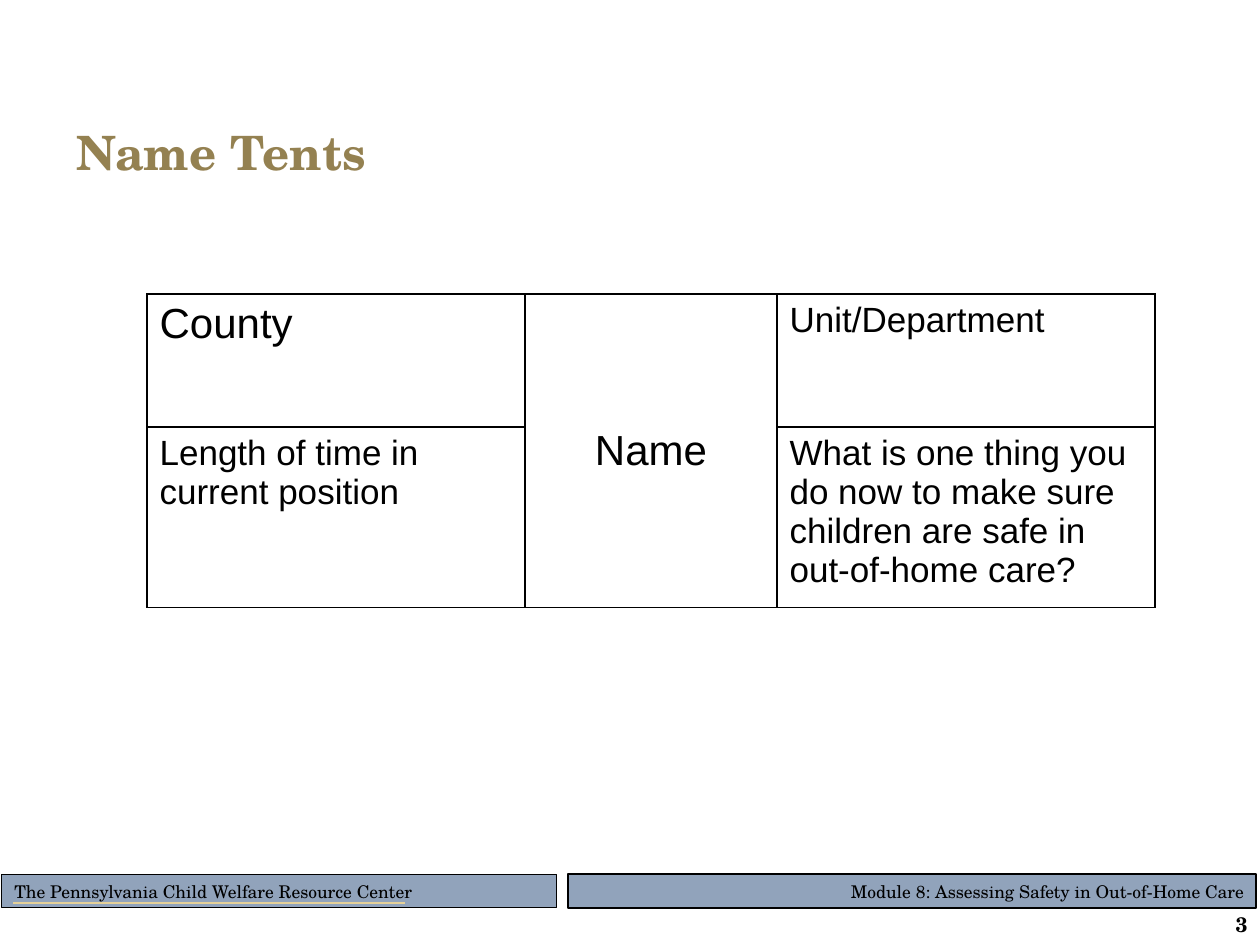
from lxml import etree
from pptx import Presentation
from pptx.dml.color import RGBColor
from pptx.enum.shapes import MSO_CONNECTOR, MSO_SHAPE
from pptx.enum.text import MSO_ANCHOR, PP_ALIGN
from pptx.oxml.ns import qn
from pptx.util import Emu, Pt

LEFT, CENTER, RIGHT = PP_ALIGN.LEFT, PP_ALIGN.CENTER, PP_ALIGN.RIGHT
TOP, MIDDLE = MSO_ANCHOR.TOP, MSO_ANCHOR.MIDDLE
RECTANGLE, STRAIGHT = MSO_SHAPE.RECTANGLE, MSO_CONNECTOR.STRAIGHT
TITLE_ONLY = 5
SERIF, SANS = "TeX Gyre Schola", "Arial"
BLACK, GOLD, BLUE, SAND = "000000", "948151", "91A3BB", "E5D199"

TITLE = "Name Tents"
PAGE_NUMBER = "3"
# text, left, width, line width in points, alignment
FOOTERS = [
    ("Module 8: Assessing Safety in Out-of-Home Care", 568, 688, 0.75, RIGHT),
    ("The Pennsylvania Child Welfare Resource Center", 2, 555, 0.5, LEFT),
]
FOOTER_TOP, FOOTER_HEIGHT = 874, 34
TABLE_LEFT, TABLE_TOP = 147, 294
COLUMN_WIDTHS = [378, 252, 378]
ROW_HEIGHTS = [133, 180]
# row, column, text, size, alignment, anchor
CELLS = [
    (0, 0, "County", 24, LEFT, TOP),
    (0, 1, "Name", 24, CENTER, MIDDLE),
    (0, 2, "Unit/Department", 20, LEFT, TOP),
    (1, 0, "Length of time in current position", 20, LEFT, TOP),
    (1, 2, "What is one thing you do now to make sure children are safe "
           "in out-of-home care?", 20, LEFT, TOP),
]


def px(value):
    return Emu(value * 914400 // 126)


def color(hex_text):
    return RGBColor.from_string(hex_text)


def write(frame, text, size, font=SERIF, fill=BLACK, bold=False, align=LEFT):
    paragraph = frame.paragraphs[0]
    paragraph.alignment = align
    run = paragraph.add_run()
    run.text = text
    run.font.size = Pt(size)
    run.font.name = font
    run.font.bold = bold
    run.font.color.rgb = color(fill)


def add_footer(slide, text, left, width, line_width, align):
    bar = slide.shapes.add_shape(
        RECTANGLE, px(left), px(FOOTER_TOP), px(width), px(FOOTER_HEIGHT))
    bar.shadow.inherit = False
    bar.fill.solid()
    bar.fill.fore_color.rgb = color(BLUE)
    bar.line.color.rgb = color(BLACK)
    bar.line.width = Pt(line_width)
    bar.text_frame.word_wrap = True
    bar.text_frame.vertical_anchor = MIDDLE
    write(bar.text_frame, text, 10, align=align)


def add_underline(slide):
    line = slide.shapes.add_connector(STRAIGHT, px(13), px(903), px(405), px(903))
    line.line.color.rgb = color(SAND)
    line.line.width = Pt(0.75)
    etree.SubElement(line._element.spPr, qn("a:effectLst"))


def add_title(slide):
    title = slide.shapes.title
    title.left, title.top, title.width, title.height = map(px, (64, 110, 1134, 83))
    title.text_frame.vertical_anchor = MIDDLE
    write(title.text_frame, TITLE, 27, fill=GOLD, bold=True)


def add_page_number(slide):
    box = slide.shapes.add_textbox(px(1120), px(912), px(140), px(25))
    box.text_frame.word_wrap = True
    box.text_frame.vertical_anchor = MIDDLE
    write(box.text_frame, PAGE_NUMBER, 12, bold=True, align=RIGHT)


def outline_cell(cell):
    properties = cell._tc.get_or_add_tcPr()
    for index, side in enumerate(("a:lnL", "a:lnR", "a:lnT", "a:lnB")):
        border = etree.Element(qn(side), w=str(Pt(1)))
        fill = etree.SubElement(border, qn("a:solidFill"))
        etree.SubElement(fill, qn("a:srgbClr"), val=BLACK)
        properties.insert(index, border)


def add_name_tent(slide):
    table = slide.shapes.add_table(
        len(ROW_HEIGHTS), len(COLUMN_WIDTHS), px(TABLE_LEFT), px(TABLE_TOP),
        px(sum(COLUMN_WIDTHS)), px(sum(ROW_HEIGHTS))).table
    table.first_row = table.horz_banding = False
    for column, width in zip(table.columns, COLUMN_WIDTHS):
        column.width = px(width)
    for row, height in zip(table.rows, ROW_HEIGHTS):
        row.height = px(height)
    table.cell(0, 1).merge(table.cell(1, 1))
    for cell in table.iter_cells():
        cell.fill.background()
        outline_cell(cell)
    for row, column, text, size, align, anchor in CELLS:
        cell = table.cell(row, column)
        cell.vertical_anchor = anchor
        write(cell.text_frame, text, size, font=SANS, align=align)


def main():
    presentation = Presentation()
    presentation.slide_width, presentation.slide_height = px(1260), px(945)
    slide = presentation.slides.add_slide(presentation.slide_layouts[TITLE_ONLY])
    for footer in FOOTERS:
        add_footer(slide, *footer)
    add_underline(slide)
    add_title(slide)
    add_page_number(slide)
    add_name_tent(slide)
    presentation.save("out.pptx")


if __name__ == "__main__":
    main()
